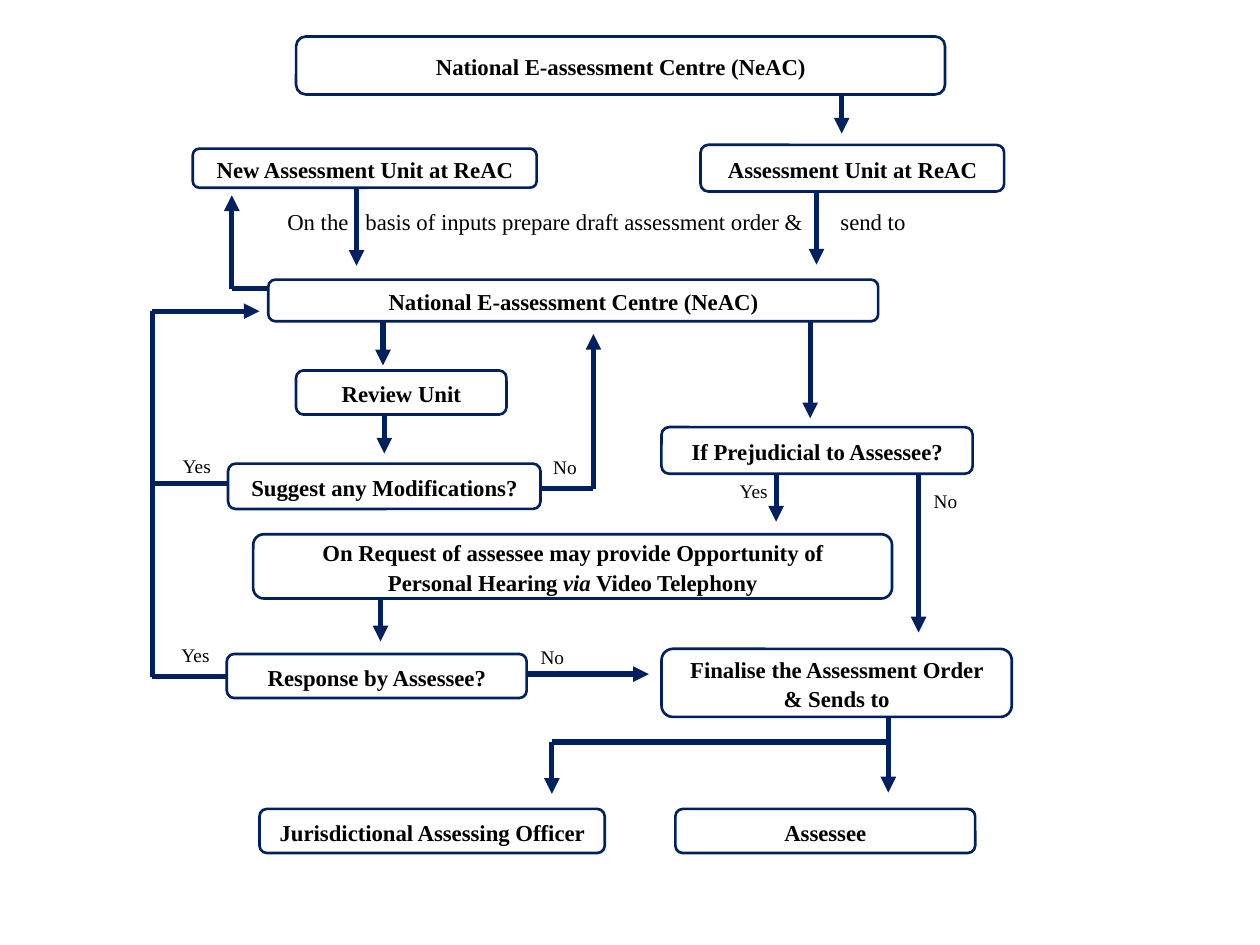
from lxml import etree
from pptx import Presentation
from pptx.dml.color import RGBColor
from pptx.enum import shapes, text
from pptx.oxml.ns import qn
from pptx.util import Inches, Pt

NAVY = RGBColor.from_string("002060")
BLACK = RGBColor.from_string("000000")


def write_text(shape, lines, size, bold, align):
    """Fill a shape with lines; text between asterisks is set in italics."""
    frame = shape.text_frame
    frame.word_wrap = True
    frame.margin_left = frame.margin_right = Inches(0.09)
    frame.margin_top = frame.margin_bottom = Inches(0.04)
    for index, line in enumerate(lines):
        para = frame.paragraphs[0] if index == 0 else frame.add_paragraph()
        para.alignment = align
        para.line_spacing = 1.07
        for part, words in enumerate(line.split("*")):
            span = para.add_run()
            span.text = words
            span.font.name = "Times New Roman"
            span.font.size = Pt(size)
            span.font.bold = bold
            span.font.italic = part % 2 == 1
            span.font.color.rgb = BLACK


def draw_line(page, start, end, arrow):
    line = page.shapes.add_connector(
        shapes.MSO_CONNECTOR.STRAIGHT, *(Inches(value) for value in start + end))
    line.line.color.rgb = NAVY
    line.line.width = Pt(3)
    if arrow:
        outline = line.line._get_or_add_ln()
        etree.SubElement(outline, qn("a:tailEnd"), type="triangle")
    etree.SubElement(line._element.spPr, qn("a:effectLst"))


deck = Presentation()
deck.slide_width = Inches(10)
deck.slide_height = Inches(7.5)
page = deck.slides.add_slide(deck.slide_layouts[6])

# Steps: left, top, width, height, lines
steps = [
    (2.35, 0.29, 5.15, 0.46, ["National E-assessment Centre (NeAC)"]),
    (5.56, 1.15, 2.41, 0.37, ["Assessment Unit at ReAC"]),
    (1.53, 1.18, 2.73, 0.31, ["New Assessment Unit at ReAC"]),
    (2.13, 2.22, 4.84, 0.33, ["National E-assessment Centre (NeAC)"]),
    (2.35, 2.94, 1.67, 0.35, ["Review Unit"]),
    (1.81, 3.68, 2.48, 0.36, ["Suggest any Modifications?"]),
    (5.25, 3.39, 2.47, 0.37, ["If Prejudicial to Assessee?"]),
    (2.01, 4.24, 5.07, 0.51, ["On Request of assessee may provide Opportunity of",
                              "Personal Hearing *via* Video Telephony"]),
    (1.80, 5.19, 2.38, 0.35, ["Response by Assessee?"]),
    (5.25, 5.15, 2.78, 0.54, ["Finalise the Assessment Order", "& Sends to"]),
    (2.06, 6.42, 2.74, 0.35, ["Jurisdictional Assessing Officer"]),
    (5.36, 6.42, 2.38, 0.35, ["Assessee"]),
]
for *place, lines in steps:
    box = page.shapes.add_shape(
        shapes.MSO_SHAPE.ROUNDED_RECTANGLE, *(Inches(value) for value in place))
    box.shadow.inherit = False
    box.fill.background()
    box.line.color.rgb = NAVY
    box.line.width = Pt(1.5)
    box.text_frame.vertical_anchor = text.MSO_ANCHOR.MIDDLE
    write_text(box, lines, 13, True, text.PP_ALIGN.CENTER)

# Routes: corner points; the flag puts an arrowhead on the last leg
routes = [
    ([(6.68, 0.75), (6.68, 1.06)], True),
    ([(6.48, 1.52), (6.48, 2.10)], True),
    ([(2.83, 1.49), (2.83, 2.11)], True),
    ([(2.13, 2.29), (1.84, 2.29), (1.84, 1.55)], True),
    ([(3.04, 2.55), (3.04, 2.90)], True),
    ([(6.43, 2.55), (6.43, 3.32)], True),
    ([(3.05, 3.29), (3.05, 3.60)], True),
    ([(4.29, 3.88), (4.71, 3.88), (4.71, 2.65)], True),
    ([(6.16, 3.76), (6.16, 4.14)], True),
    ([(7.29, 3.76), (7.29, 5.02)], True),
    ([(3.02, 4.75), (3.02, 5.09)], True),
    ([(4.18, 5.35), (5.15, 5.35)], True),
    ([(7.05, 5.69), (7.05, 6.29)], True),
    ([(7.05, 5.89), (4.38, 5.89), (4.38, 6.30)], True),
    ([(1.81, 3.84), (1.21, 3.84), (1.21, 2.47), (2.06, 2.47)], True),
    ([(1.80, 5.37), (1.21, 5.37), (1.21, 3.84)], False),
]
for points, arrow in routes:
    legs = list(zip(points, points[1:]))
    for number, (start, end) in enumerate(legs, 1):
        draw_line(page, start, end, arrow and number == len(legs))

answers = [
    (1.36, 3.55, "Yes"), (4.30, 3.56, "No"),
    (5.78, 3.75, "Yes"), (7.32, 3.83, "No"),
    (1.35, 5.05, "Yes"), (4.20, 5.07, "No"),
]
for left, top, answer in answers:
    label = page.shapes.add_textbox(
        Inches(left), Inches(top), Inches(0.49), Inches(0.24))
    write_text(label, [answer], 11, False, text.PP_ALIGN.LEFT)

# The note is tabbed around the two arrows that cross it
note = page.shapes.add_textbox(Inches(2.19), Inches(1.59), Inches(5.11), Inches(0.32))
write_text(note, ["On the\tbasis of inputs prepare draft assessment order &\tsend to"],
           13, False, text.PP_ALIGN.LEFT)
properties = note.text_frame.paragraphs[0]._p.get_or_add_pPr()
tabs = etree.SubElement(properties, qn("a:tabLst"))
for stop in (0.62, 4.39):
    etree.SubElement(tabs, qn("a:tab"), pos=str(Inches(stop)), algn="l")

deck.save("out.pptx")
